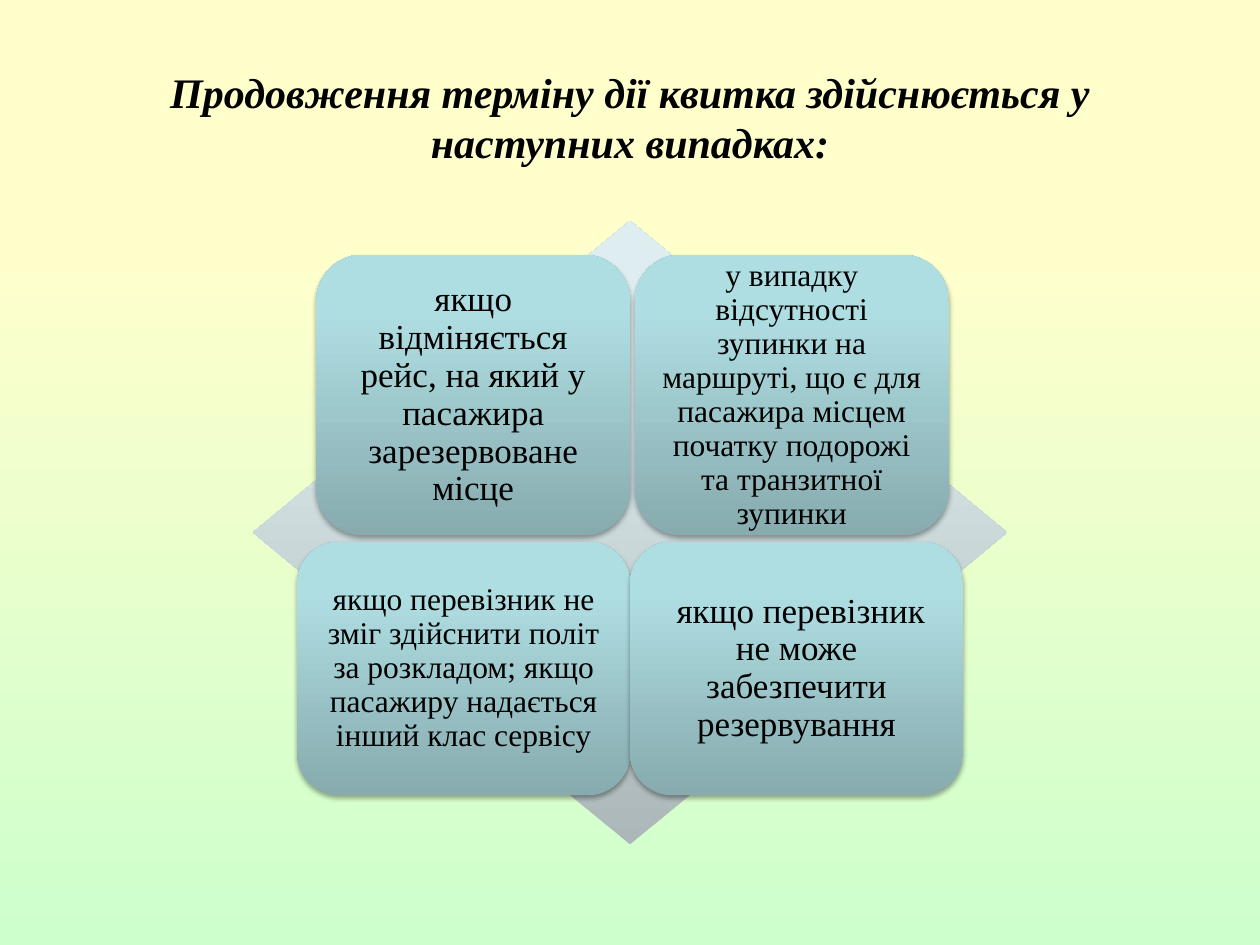
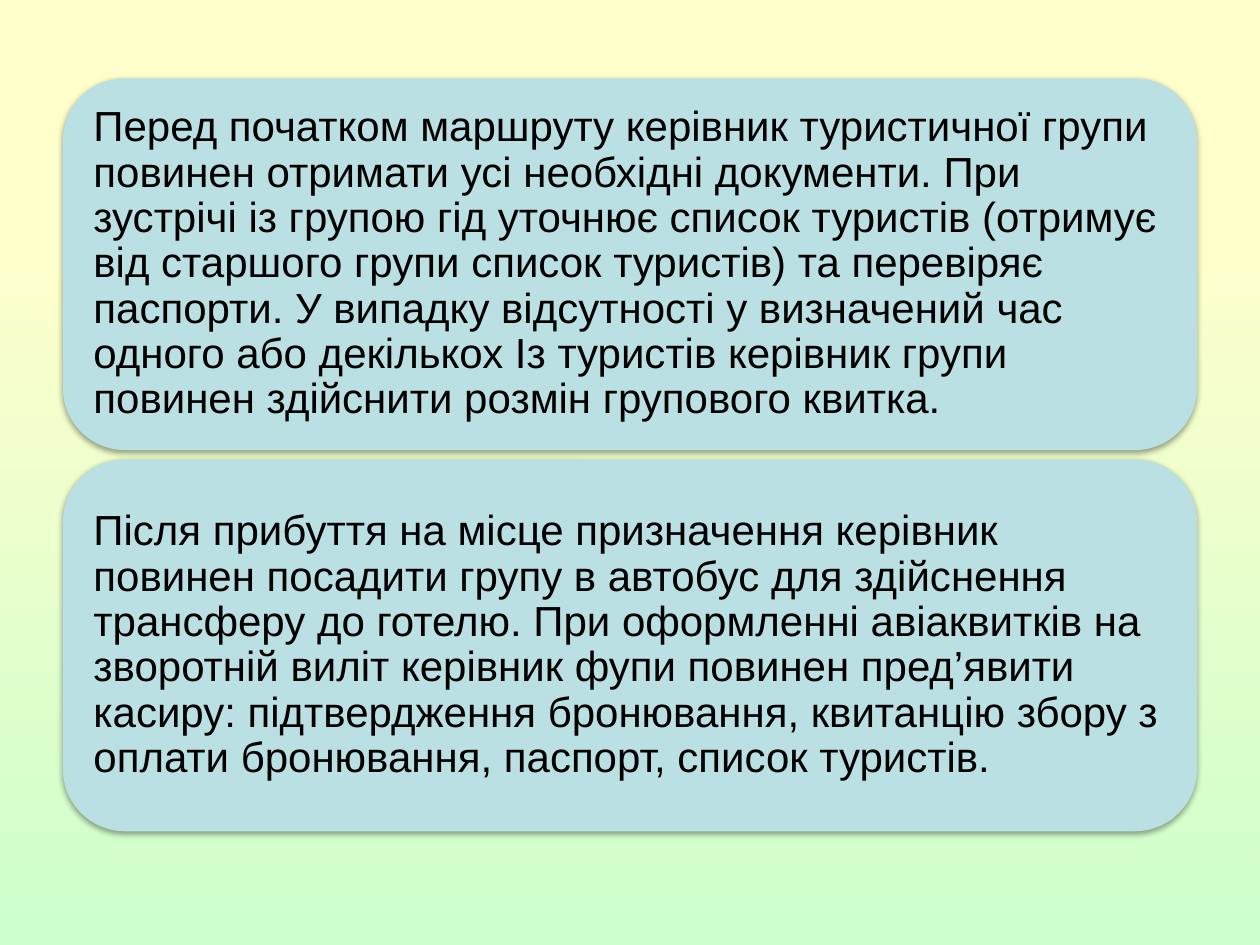
"""Builds two slides on extending a ticket and on guiding a tour group."""
from lxml.etree import SubElement
from pptx import Presentation
from pptx.dml.color import RGBColor
from pptx.enum.shapes import MSO_SHAPE
from pptx.enum.text import MSO_ANCHOR, PP_ALIGN
from pptx.oxml.ns import qn
from pptx.util import Pt

HUES = {"black": "000000", "aqua": "BBE0E3", "cream": "FFFFCC", "mint": "CCFFCC",
        "teal": "87ABAE", "sky": "AFDEE2", "pale": "AFE0E4",
        "slate": "ABB7B8", "mist": "DEEDEF", "haze": "DFEFF0"}
BACK = [(0, "cream"), (26, "cream"), (100, "mint")]
CARD = [(0, "teal"), (80, "sky"), (100, "pale")]
GEM = [(0, "slate"), (80, "mist"), (100, "haze")]
SERIF, SANS = "Times New Roman", "Arial"


def blend(fill, root, stops, angle):
    """Fill with a linear gradient, angle clockwise in degrees."""
    fill.gradient()
    grad = root.find(".//" + qn("a:gradFill"))
    for child in list(grad):
        grad.remove(child)
    row = SubElement(grad, qn("a:gsLst"))
    for place, hue in stops:
        stop = SubElement(row, qn("a:gs"), pos=str(place * 1000))
        SubElement(stop, qn("a:srgbClr"), val=HUES[hue])
    SubElement(grad, qn("a:lin"), ang=str(angle * 60000), scaled="0")


def write(shape, text, size, font, align, inset, space=0.9):
    """Put one black paragraph, centred in height, into a shape."""
    frame = shape.text_frame
    frame.word_wrap = True
    frame.vertical_anchor = MSO_ANCHOR.MIDDLE
    frame.margin_left = frame.margin_right = Pt(inset)
    frame.margin_top = frame.margin_bottom = Pt(inset)
    para = frame.paragraphs[0]
    para.text = text
    para.alignment = align
    para.line_spacing = space
    para.font.size = Pt(size)
    para.font.name = font
    para.font.color.rgb = RGBColor.from_string(HUES["black"])
    return para


deck = Presentation()
deck.slide_width, deck.slide_height = Pt(720), Pt(540)
slides = [deck.slides.add_slide(deck.slide_layouts[6]) for _ in range(2)]
for slide in slides:
    blend(slide.background.fill, slide.element, BACK, 90)
cases, guide = slides

title = cases.shapes.add_textbox(Pt(36), Pt(21.6), Pt(648), Pt(90))
head = write(title, "Продовження терміну дії квитка здійснюється у наступних випадках:",
             24, SERIF, PP_ALIGN.CENTER, 7.2, 1)
head.font.bold = head.font.italic = True

gem = cases.shapes.add_shape(MSO_SHAPE.DIAMOND, Pt(144.5), Pt(126), Pt(431), Pt(356.5))
gem.shadow.inherit = False
gem.line.fill.background()
blend(gem.fill, gem.element, GEM, 270)

top = (145.5, 179.5, 160.5)
low = (309.5, 190.3, 145)
cards = [
    (cases, 180.7, *top, 20, "якщо відміняється рейс, на який у пасажира зарезервоване місце"),
    (cases, 362.7, *top, 18, "у випадку відсутності зупинки на маршруті, що є для пасажира "
     "місцем початку подорожі та транзитної зупинки"),
    (cases, 169.8, *low, 18, "якщо перевізник не зміг здійснити політ за розкладом; якщо "
     "пасажиру надається інший клас сервісу"),
    (cases, 360, *low, 20, " якщо перевізник не може забезпечити резервування"),
]
notes = [
    "Перед початком маршруту керівник туристичної групи повинен отримати усі необхідні "
    "документи. При зустрічі із групою гід уточнює список туристів (отримує від старшого "
    "групи список туристів) та перевіряє паспорти. У випадку відсутності у визначений час "
    "одного або декількох Із туристів керівник групи повинен здійснити розмін групового квитка.",
    "Після прибуття на місце призначення керівник повинен посадити групу в автобус для "
    "здійснення трансферу до готелю. При оформленні авіаквитків на зворотній виліт керівник "
    "фупи повинен пред’явити касиру: підтвердження бронювання, квитанцію збору з оплати "
    "бронювання, паспорт, список туристів.",
]
for i, note in enumerate(notes):
    cards.append((guide, 36, 44.8 + i * 217.8, 648, 212.4, 24, note))

for slide, x, y, wide, high, size, text in cards:
    card = slide.shapes.add_shape(MSO_SHAPE.ROUNDED_RECTANGLE, Pt(x), Pt(y), Pt(wide), Pt(high))
    card.line.fill.background()
    card.shadow.inherit = False
    if slide is cases:
        blend(card.fill, card.element, CARD, 270)
        write(card, text, size, SERIF, PP_ALIGN.CENTER, size * 0.3)
        drop, alpha = 1.8, 35
    else:
        card.fill.solid()
        card.fill.fore_color.rgb = RGBColor.from_string(HUES["aqua"])
        write(card, text, size, SANS, PP_ALIGN.LEFT, 7.2)
        drop, alpha = 1.6, 38
    glow = SubElement(card.element.find(".//" + qn("a:effectLst")), qn("a:outerShdw"),
                      blurRad=str(Pt(3.1)), dist=str(Pt(drop)), dir="5400000", rotWithShape="0")
    shade = SubElement(glow, qn("a:srgbClr"), val=HUES["black"])
    SubElement(shade, qn("a:alpha"), val=str(alpha * 1000))

deck.save("out.pptx")
